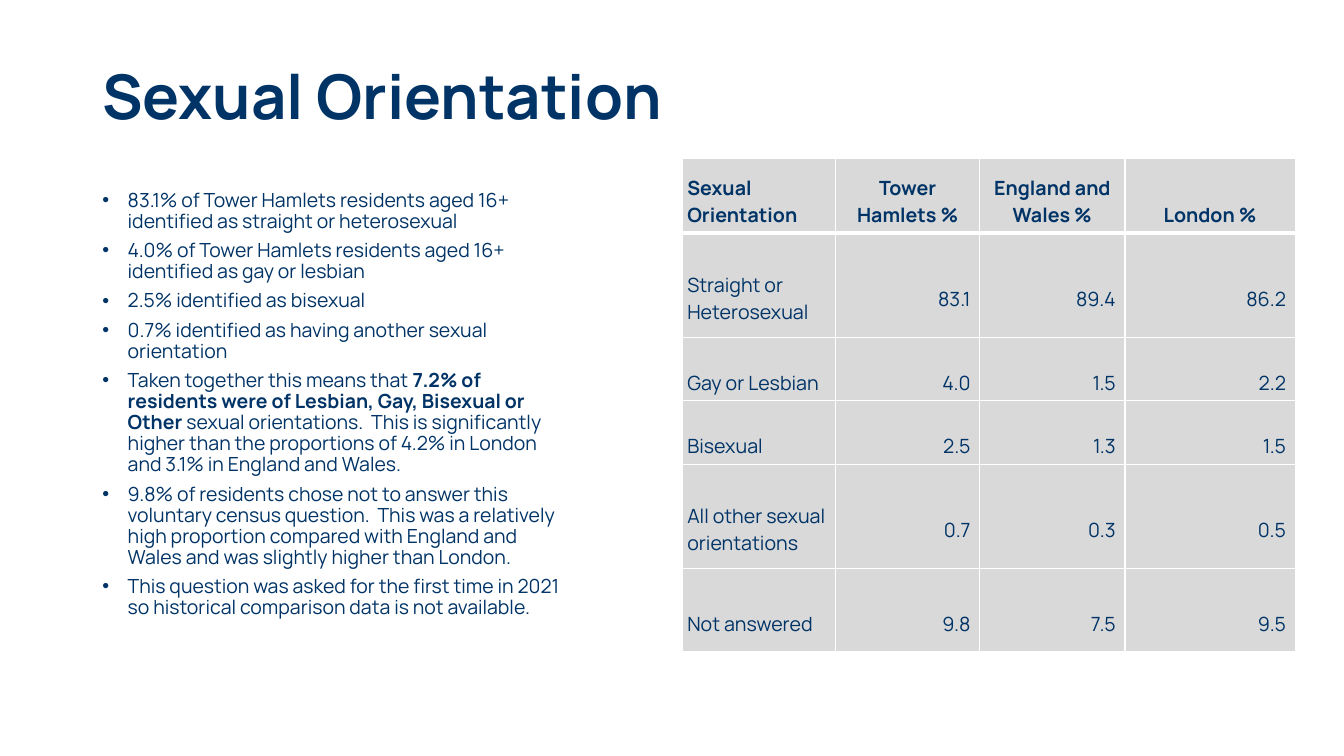
from lxml.etree import SubElement
from pptx import Presentation
from pptx.dml.color import RGBColor
from pptx.enum.text import MSO_ANCHOR, MSO_AUTO_SIZE, PP_ALIGN
from pptx.oxml.ns import qn
from pptx.util import Cm, Pt

FONT = "Manrope"
NAVY, GREY, WHITE = "003366", "D9D9D9", "FFFFFF"

TITLE = "Sexual Orientation"
# Each bullet is a list of (text, bold) runs.
BULLETS = [
    [("83.1% of Tower Hamlets residents aged 16+ identified as straight or heterosexual", False)],
    [("4.0% of Tower Hamlets residents aged 16+ identified as gay or lesbian", False)],
    [("2.5% identified as bisexual", False)],
    [("0.7% identified as having another sexual orientation", False)],
    [("Taken together this means that ", False),
     ("7.2% of residents were of Lesbian, Gay, Bisexual or Other ", True),
     ("sexual orientations.  This is significantly higher than the proportions "
      "of 4.2% in London and 3.1% in England and Wales.", False)],
    [("9.8% of residents chose not to answer this voluntary census question.  "
      "This was a relatively high proportion compared with England and Wales "
      "and was slightly higher than London.", False)],
    [("This question was asked for the first time in 2021 so historical "
      "comparison data is not available.", False)],
]
TABLE = [
    ("Sexual Orientation", "Tower Hamlets %", "England and Wales %", "London %"),
    ("Straight or Heterosexual", "83.1", "89.4", "86.2"),
    ("Gay or Lesbian", "4.0", "1.5", "2.2"),
    ("Bisexual", "2.5", "1.3", "1.5"),
    ("All other sexual orientations", "0.7", "0.3", "0.5"),
    ("Not answered", "9.8", "7.5", "9.5"),
]
COLUMN_WIDTHS = [3.86, 3.63, 3.66, 4.29]
ROW_HEIGHTS = [1.88, 2.62, 1.6, 1.6, 2.62, 2.11]


def color(hex_string):
    return RGBColor.from_string(hex_string)


def add_run(paragraph, text, size, bold=False):
    run = paragraph.add_run()
    run.text = text
    run.font.name = FONT
    run.font.size = Pt(size)
    run.font.bold = bold
    run.font.color.rgb = color(NAVY)


def add_bullet(paragraph):
    properties = paragraph._p.get_or_add_pPr()
    properties.set("marL", str(Cm(0.64)))
    properties.set("indent", str(-Cm(0.64)))
    SubElement(properties, qn("a:buFont"), typeface="Arial")
    SubElement(properties, qn("a:buChar"), char="•")


def add_border(cell, side, points):
    """Draw a white line on one side of a cell; the line must precede the fill."""
    properties = cell._tc.get_or_add_tcPr()
    line = SubElement(properties, qn(f"a:{side}"), w=str(Pt(points)))
    fill = SubElement(line, qn("a:solidFill"))
    SubElement(fill, qn("a:srgbClr"), val=WHITE)
    properties.insert(0, line)


def add_title(slide):
    title = slide.shapes.title
    title.left, title.top, title.width, title.height = Cm(2.33), Cm(0.66), Cm(27.15), Cm(3.68)
    frame = title.text_frame
    frame.auto_size = MSO_AUTO_SIZE.NONE
    frame.vertical_anchor = MSO_ANCHOR.MIDDLE
    paragraph = frame.paragraphs[0]
    paragraph.alignment = PP_ALIGN.LEFT
    paragraph.line_spacing = 0.9
    add_run(paragraph, TITLE, 44, bold=True)


def add_findings(slide):
    frame = slide.shapes.add_textbox(Cm(2.33), Cm(4.67), Cm(12.37), Cm(11.56)).text_frame
    frame.word_wrap = True
    for index, runs in enumerate(BULLETS):
        paragraph = frame.add_paragraph() if index else frame.paragraphs[0]
        add_bullet(paragraph)
        paragraph.line_spacing = 0.9
        paragraph.space_before = Pt(6 if index else 0)
        for text, bold in runs:
            add_run(paragraph, text, 13.9, bold)


def fill_cell(cell, text, is_header, is_label):
    cell.fill.solid()
    cell.fill.fore_color.rgb = color(GREY)
    cell.margin_left = cell.margin_right = cell.margin_top = cell.margin_bottom = Cm(0.12)
    cell.vertical_anchor = MSO_ANCHOR.BOTTOM if is_header else MSO_ANCHOR.MIDDLE
    paragraph = cell.text_frame.paragraphs[0]
    if is_header:
        add_border(cell, "lnB", 3)
    else:
        cell.margin_top = Cm(0.8)
    if is_label:
        paragraph.alignment = PP_ALIGN.LEFT
    elif is_header:
        paragraph.alignment = PP_ALIGN.CENTER
    else:
        paragraph.alignment = PP_ALIGN.RIGHT
        cell.margin_right = Cm(0.23)
    add_run(paragraph, text, 14, bold=is_header)


def add_orientation_table(slide):
    table = slide.shapes.add_table(
        len(TABLE), len(COLUMN_WIDTHS), Cm(17.2), Cm(4),
        Cm(sum(COLUMN_WIDTHS)), Cm(sum(ROW_HEIGHTS))).table
    table.horz_banding = False
    for column, width in zip(table.columns, COLUMN_WIDTHS):
        column.width = Cm(width)
    for row, height in zip(table.rows, ROW_HEIGHTS):
        row.height = Cm(height)
    for row_index, texts in enumerate(TABLE):
        for column_index, text in enumerate(texts):
            fill_cell(table.cell(row_index, column_index), text,
                      is_header=row_index == 0, is_label=column_index == 0)


def main():
    presentation = Presentation()
    presentation.slide_width, presentation.slide_height = Cm(33.87), Cm(19.05)
    slide = presentation.slides.add_slide(presentation.slide_layouts[5])
    add_title(slide)
    add_findings(slide)
    add_orientation_table(slide)
    presentation.save("out.pptx")


if __name__ == "__main__":
    main()
